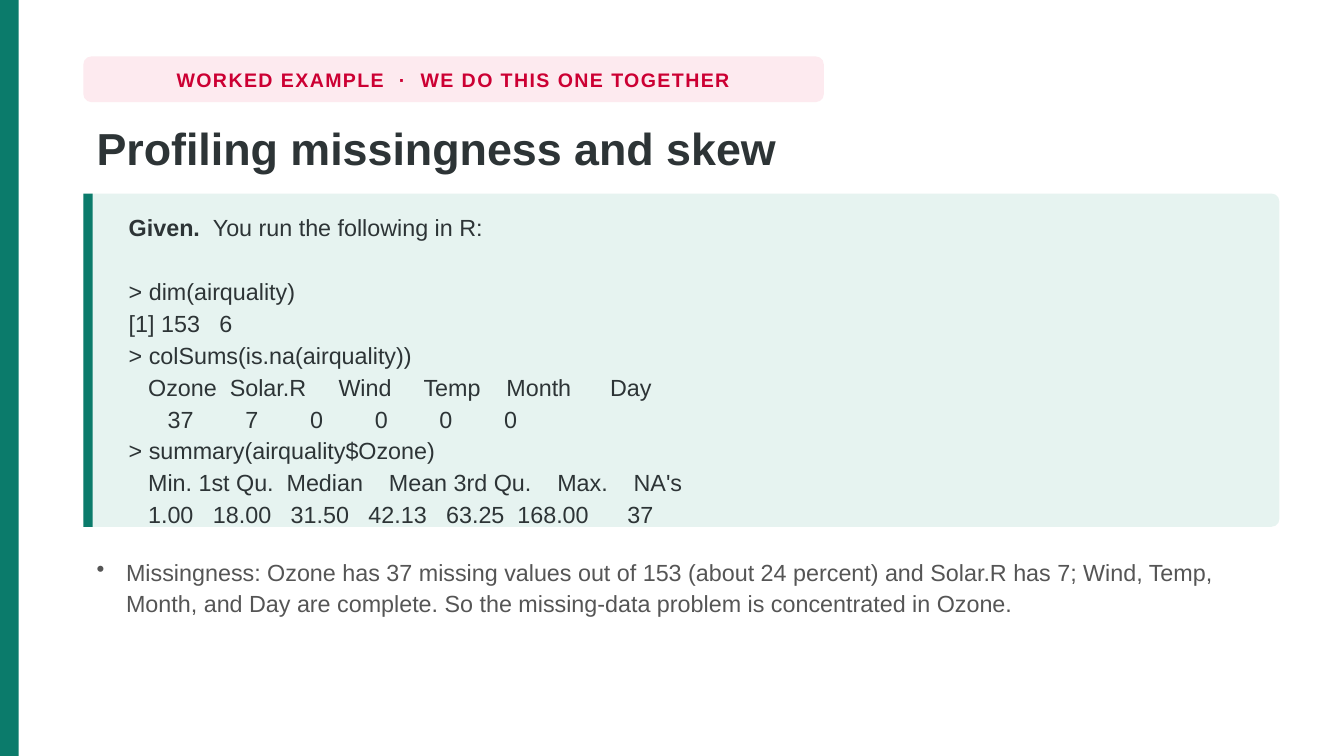
from dataclasses import dataclass

from lxml import etree
from pptx import Presentation
from pptx import util as u
from pptx.dml.color import RGBColor
from pptx.enum import shapes, text
from pptx.oxml.ns import qn


@dataclass(frozen=True)
class Theme:
    font: str = "Arial"
    accent: str = "0B7B6B"
    panel: str = "E6F3F0"
    tag_fill: str = "FDEAEF"
    tag_ink: str = "CC0033"
    ink: str = "2D3436"
    muted: str = "555555"
    tag_size: float = 10.5
    title_size: float = 24
    body_size: float = 12.5


T = Theme()
W = 10
H = W * 9 / 16
LEFT, WIDTH = 0.62, 8.9
RECT = shapes.MSO_SHAPE.RECTANGLE
ROUND = shapes.MSO_SHAPE.ROUNDED_RECTANGLE

OUTPUT = """> dim(airquality)
[1] 153   6
> colSums(is.na(airquality))
   Ozone  Solar.R     Wind     Temp    Month      Day
      37        7        0        0        0        0
> summary(airquality$Ozone)
   Min. 1st Qu.  Median    Mean 3rd Qu.    Max.    NA's
   1.00   18.00   31.50   42.13   63.25  168.00      37"""

FINDING = (
    "Missingness: Ozone has 37 missing values out of 153 (about 24 percent) "
    "and Solar.R has 7; Wind, Temp, Month, and Day are complete. "
    "So the missing-data problem is concentrated in Ozone."
)


def add_block(s, kind, box, color, radius=None):
    """Plain filled shape; radius is the corner size in inches."""
    sp = s.shapes.add_shape(kind, *map(u.Inches, box))
    sp.shadow.inherit = False
    sp.fill.solid()
    sp.fill.fore_color.rgb = RGBColor.from_string(color)
    sp.line.fill.background()
    if radius:
        sp.adjustments[0] = radius / min(box[2:])


def add_box(s, box, wrap=True, anchor=text.MSO_ANCHOR.TOP):
    tf = s.shapes.add_textbox(*map(u.Inches, box)).text_frame
    tf.word_wrap = wrap
    tf.vertical_anchor = anchor
    return tf


def next_par(tf, spacing=None, before=0, align=None):
    p = tf.paragraphs[0]
    if p.runs:
        p = tf.add_paragraph()
    p.alignment = align
    if spacing:
        p.line_spacing = spacing
    if before:
        p.space_before = u.Pt(before)
    return p


def add_text(p, words, size=T.body_size, color=T.ink, bold=False, tracking=0):
    r = p.add_run()
    r.text = words
    r.font.name = T.font
    r.font.size = u.Pt(size)
    r.font.bold = bold
    r.font.color.rgb = RGBColor.from_string(color)
    if tracking:
        r.font._element.set("spc", str(round(tracking * 100)))


def add_bullet(p, indent):
    pPr = p._p.get_or_add_pPr()
    pPr.set("marL", str(u.Inches(indent)))
    pPr.set("indent", str(-u.Inches(indent)))
    etree.SubElement(pPr, qn("a:buSzPct")).set("val", "100000")
    etree.SubElement(pPr, qn("a:buChar")).set("char", "•")


def tag(s, box):
    add_block(s, ROUND, box, T.tag_fill, radius=0.06)
    tf = add_box(s, box, wrap=False, anchor=text.MSO_ANCHOR.MIDDLE)
    p = next_par(tf, align=text.PP_ALIGN.CENTER)
    add_text(p, "WORKED EXAMPLE  ·  WE DO THIS ONE TOGETHER",
             size=T.tag_size, color=T.tag_ink, bold=True, tracking=0.8)


def title(s, box):
    p = next_par(add_box(s, box), spacing=1.02)
    add_text(p, "Profiling missingness and skew", size=T.title_size, bold=True)


def given_panel(s, box):
    x, y, w, h = box
    add_block(s, ROUND, box, T.panel, radius=0.06)
    add_block(s, RECT, (x, y, 0.07, h), T.accent)
    tf = add_box(s, (x + 0.24, y + 0.07, w - 0.5, h - 0.14))
    p = next_par(tf, spacing=1.14)
    add_text(p, "Given.  ", bold=True)
    add_text(p, "You run the following in R:")
    # One line of space sets the console output apart
    for i, line in enumerate(OUTPUT.splitlines()):
        add_text(next_par(tf, spacing=1.14, before=0 if i else 17), line)


def finding(s, box):
    p = next_par(add_box(s, box), spacing=1.12)
    add_bullet(p, 0.22)
    add_text(p, FINDING, color=T.muted)


def main():
    prs = Presentation()
    prs.slide_width, prs.slide_height = u.Inches(W), u.Inches(H)
    s = prs.slides.add_slide(prs.slide_layouts[6])

    add_block(s, RECT, (0, 0, 0.14, H), T.accent)  # edge band
    tag(s, (LEFT, 0.42, 5.51, 0.34))
    title(s, (LEFT, 0.84, WIDTH, 0.56))
    given_panel(s, (LEFT, 1.44, WIDTH, 2.48))
    finding(s, (LEFT, 4.08, WIDTH, 0.71))

    prs.save("out.pptx")


if __name__ == "__main__":
    main()
